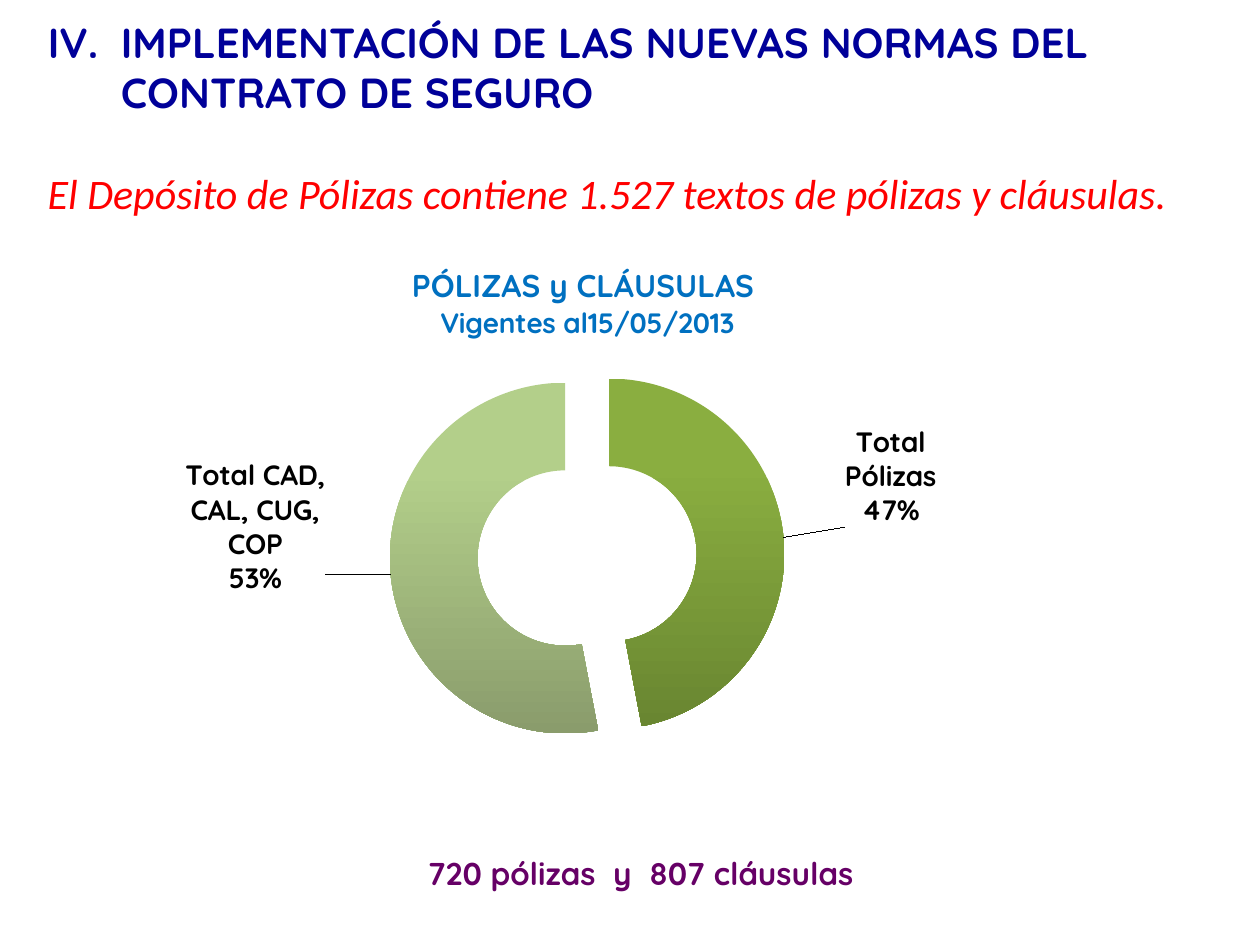
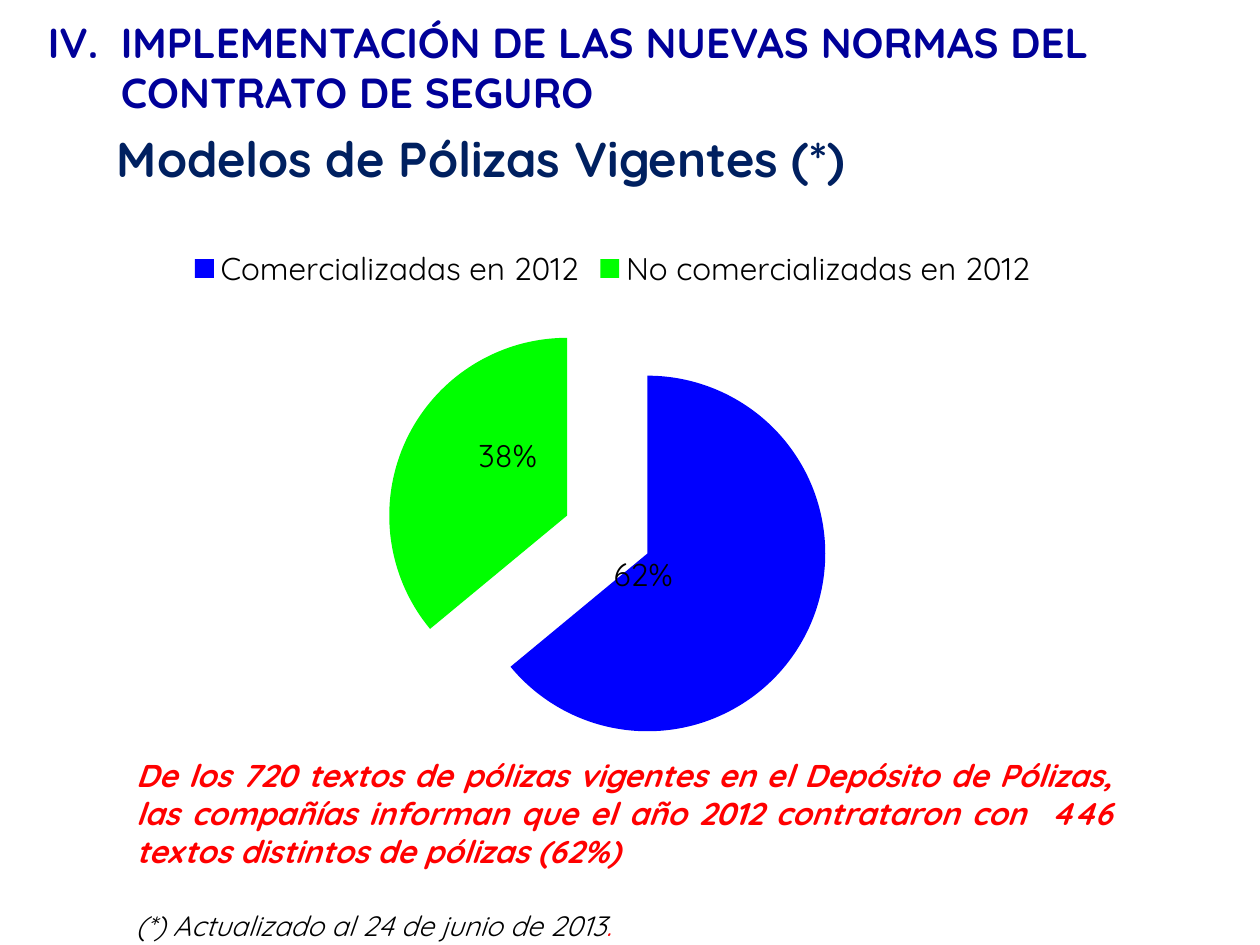
from pptx import Presentation
from pptx.chart.data import CategoryChartData
from pptx.dml.color import RGBColor
from pptx.enum.chart import XL_CHART_TYPE, XL_LABEL_POSITION, XL_LEGEND_POSITION
from pptx.enum.text import MSO_ANCHOR, PP_ALIGN
from pptx.oxml import parse_xml
from pptx.oxml.ns import nsdecls
from pptx.util import Inches, Pt

LEFT, CENTER, JUSTIFY = PP_ALIGN.LEFT, PP_ALIGN.CENTER, PP_ALIGN.JUSTIFY
DOUGHNUT, PIE = XL_CHART_TYPE.DOUGHNUT_EXPLODED, XL_CHART_TYPE.PIE_EXPLODED

# Colours
NAVY = RGBColor(0x00, 0x00, 0x99)
DEEP_BLUE = RGBColor(0x00, 0x20, 0x60)
SKY = RGBColor(0x00, 0x70, 0xC0)
RED = RGBColor(0xFF, 0x00, 0x00)
PURPLE = RGBColor(0x66, 0x00, 0x66)
BLACK = RGBColor(0x00, 0x00, 0x00)
BLUE = RGBColor(0x00, 0x00, 0xFF)
LIME = RGBColor(0x00, 0xFF, 0x00)
GREEN, GREEN_DARK = RGBColor(0x8A, 0xAE, 0x40), RGBColor(0x69, 0x86, 0x31)
PALE, PALE_DARK = RGBColor(0xB3, 0xCF, 0x8A), RGBColor(0x8A, 0x9C, 0x6C)

HEADING = "IMPLEMENTACIÓN DE LAS NUEVAS NORMAS DEL CONTRATO DE SEGURO"
BODY_FONT, LEAD_FONT = "Quicksand", "Calibri"
COLUMNS, ROWS = 100, 75


def style(font, size, color, bold=False, italic=False, name=BODY_FONT):
    font.name, font.size, font.bold, font.italic = name, Pt(size), bold, italic
    font.color.rgb = color


def layout(x, y, w=None, h=None, inner=False):
    """Manual chart layout; without a size, x and y move a label or title."""
    modes = [("layoutTarget", "inner")] if inner else []
    if w is not None or inner:
        modes += [("xMode", "edge"), ("yMode", "edge")]
    values = [(k, v) for k, v in zip("xywh", (x, y, w, h)) if v is not None]
    parts = "".join(f'<c:{tag} val="{val}"/>' for tag, val in modes + values)
    return parse_xml(f'<c:layout {nsdecls("c")}><c:manualLayout>{parts}'
                     '</c:manualLayout></c:layout>')


def place(parent, new_layout, after=None):
    for old in parent.xpath("c:layout"):
        parent.remove(old)
    if after:
        parent.xpath(f"c:{after}")[0].addnext(new_layout)
    else:
        parent.insert(0, new_layout)


class Deck:
    def __init__(self):
        self.prs = Presentation()
        self.prs.slide_width, self.prs.slide_height = Inches(10), Inches(7.5)
        self.slide = None

    def box(self, col, row, cols, rows):
        dx, dy = self.prs.slide_width / COLUMNS, self.prs.slide_height / ROWS
        return [round(v) for v in (col * dx, row * dy, cols * dx, rows * dy)]

    def new_slide(self):
        """Slide with the shared heading, numbered IV."""
        self.slide = self.prs.slides.add_slide(self.prs.slide_layouts[5])
        title = self.slide.shapes.title
        title.left, title.top, title.width, title.height = self.box(2.8, 0.8, 94.5, 9.1)
        frame = title.text_frame
        frame.text = HEADING
        frame.word_wrap, frame.vertical_anchor = True, MSO_ANCHOR.TOP
        heading = frame.paragraphs[0]
        heading.alignment = LEFT
        style(heading.runs[0].font, 24, NAVY, bold=True)
        props = heading._p.get_or_add_pPr()
        props.set("marL", str(Inches(0.58)))
        props.set("indent", str(-Inches(0.58)))
        props.append(parse_xml(f'<a:buFont {nsdecls("a")} typeface="+mj-lt"/>'))
        props.append(parse_xml(
            f'<a:buAutoNum {nsdecls("a")} type="romanUcPeriod" startAt="4"/>'))

    def text(self, area, content, size, color, align=LEFT, **look):
        frame = self.slide.shapes.add_textbox(*self.box(*area)).text_frame
        frame.word_wrap = True
        frame.text = content
        frame.paragraphs[0].alignment = align
        style(frame.paragraphs[0].runs[0].font, size, color, **look)
        return frame

    def chart(self, area, kind, shares, plot):
        data = CategoryChartData()
        data.categories = list(shares)
        data.add_series("Series 1", list(shares.values()))
        chart = self.slide.shapes.add_chart(kind, *self.box(*area), data).chart
        style(chart.font, 10, BLACK, name=LEAD_FONT)
        chart.has_legend = chart.has_title = False
        chart.plots[0].vary_by_categories = True
        place(chart._chartSpace.xpath("c:chart/c:plotArea")[0], layout(*plot, inner=True))
        return chart

    def chart_title(self, chart, lines, sizes, color, corner):
        frame = chart.chart_title.text_frame
        frame.text = "\n".join(lines)
        for line, size in zip(frame.paragraphs, sizes):
            line.alignment = CENTER
            style(line.runs[0].font, size, color, bold=True)
        place(chart.chart_title._element, layout(*corner, inner=False, w=None), "tx")
        manual = chart.chart_title._element.xpath("c:layout/c:manualLayout")[0]
        for tag in ("yMode", "xMode"):
            manual.insert(0, parse_xml(f'<c:{tag} {nsdecls("c")} val="edge"/>'))

    def chart_legend(self, chart, size, area):
        chart.has_legend = True
        chart.legend.position = XL_LEGEND_POSITION.TOP
        chart.legend.include_in_layout = False
        style(chart.legend.font, size, BLACK)
        place(chart.legend._element, layout(*area), "legendPos")

    def slice_label(self, chart, index, shift, size, text=None, bold=False):
        """Fixed text, or category and percentage when no text is given."""
        series = chart.plots[0].series[0]
        label = series.points[index].data_label
        if text:
            label.text_frame.text = text
            style(label.text_frame.paragraphs[0].runs[0].font, size, BLACK, bold)
            label.position = XL_LABEL_POSITION.CENTER
        else:
            style(label.font, size, BLACK, bold)
        element = series._element.xpath(f"c:dLbls/c:dLbl[c:idx/@val={index}]")[0]
        place(element, layout(*shift), "idx")
        if not text:
            for tag, shown in (("showVal", 0), ("showCatName", 1), ("showPercent", 1)):
                element.xpath(f"c:{tag}")[0].set("val", str(shown))
            element.append(parse_xml(f'<c:separator {nsdecls("c")}>\n</c:separator>'))


def deposit_slide(deck):
    deck.new_slide()
    deck.text((2.8, 12.8, 94.5, 5),
              "El Depósito de Pólizas contiene 1.527 textos de pólizas y cláusulas.",
              24, RED, italic=True, name=LEAD_FONT)
    # Policies against clauses
    shares = {"Total Pólizas": 47, "Total CAD, CAL, CUG, COP": 53}
    chart = deck.chart((9.2, 18.9, 74.8, 43.5), DOUGHNUT, shares, (0.29, 0.22, 0.42, 0.72))
    deck.chart_title(chart, ("PÓLIZAS y CLÁUSULAS ", "Vigentes al15/05/2013"),
                     (18, 16), SKY, (0.31, 0.04))
    shades = ((GREEN, GREEN_DARK), (PALE, PALE_DARK))
    shifts = ((0.16, -0.12), (-0.19, -0.08))
    for index, (shade, shift) in enumerate(zip(shades, shifts)):
        fill = chart.plots[0].series[0].points[index].format.fill
        fill.gradient()
        fill.gradient_angle = 270
        for stop, color, position in zip(fill.gradient_stops, shade, (0.25, 1)):
            stop.color.rgb, stop.position = color, position
        deck.slice_label(chart, index, shift, 16, bold=True)
    deck.text((23.2, 67.3, 55.3, 3.8), "720 pólizas  y  807 cláusulas",
              18, PURPLE, CENTER, bold=True)


def models_slide(deck):
    deck.new_slide()
    deck.text((8.3, 9.7, 77.2, 5.7), "Modelos de Pólizas Vigentes (*)",
              28, DEEP_BLUE, bold=True)
    # Policies sold in the year; the labels show the reported percentages
    shares = {"Comercializadas en 2012": 64, "No comercializadas en 2012": 36}
    chart = deck.chart((6.2, 18.3, 84, 43.1), PIE, shares, (0.29, 0.15, 0.42, 0.82))
    deck.chart_legend(chart, 18, (0.1, 0.02, 0.81, 0.1))
    slices = ((BLUE, "62%", (-0.08, -0.03)), (LIME, "38%", (0.02, -0.04)))
    for index, (color, percent, shift) in enumerate(slices):
        fill = chart.plots[0].series[0].points[index].format.fill
        fill.solid()
        fill.fore_color.rgb = color
        deck.slice_label(chart, index, shift, 18, percent)
    # Finding and date note
    frame = deck.text((9.8, 59.5, 79.5, 15.8),
                      "De los 720 textos de pólizas vigentes en el Depósito de Pólizas, "
                      "las compañías informan que el año 2012 contrataron con  446 "
                      "textos distintos de pólizas (62%)",
                      18, RED, JUSTIFY, bold=True, italic=True)
    note = frame.add_paragraph()
    note.alignment, note.space_before = JUSTIFY, Pt(22.5)
    for words, color in (("(*) Actualizado al 24 de junio de 2013", BLACK), (".", RED)):
        run = note.add_run()
        run.text = words
        style(run.font, 16, color, italic=True)


def main():
    deck = Deck()
    deposit_slide(deck)
    models_slide(deck)
    deck.prs.save("out.pptx")


if __name__ == "__main__":
    main()
